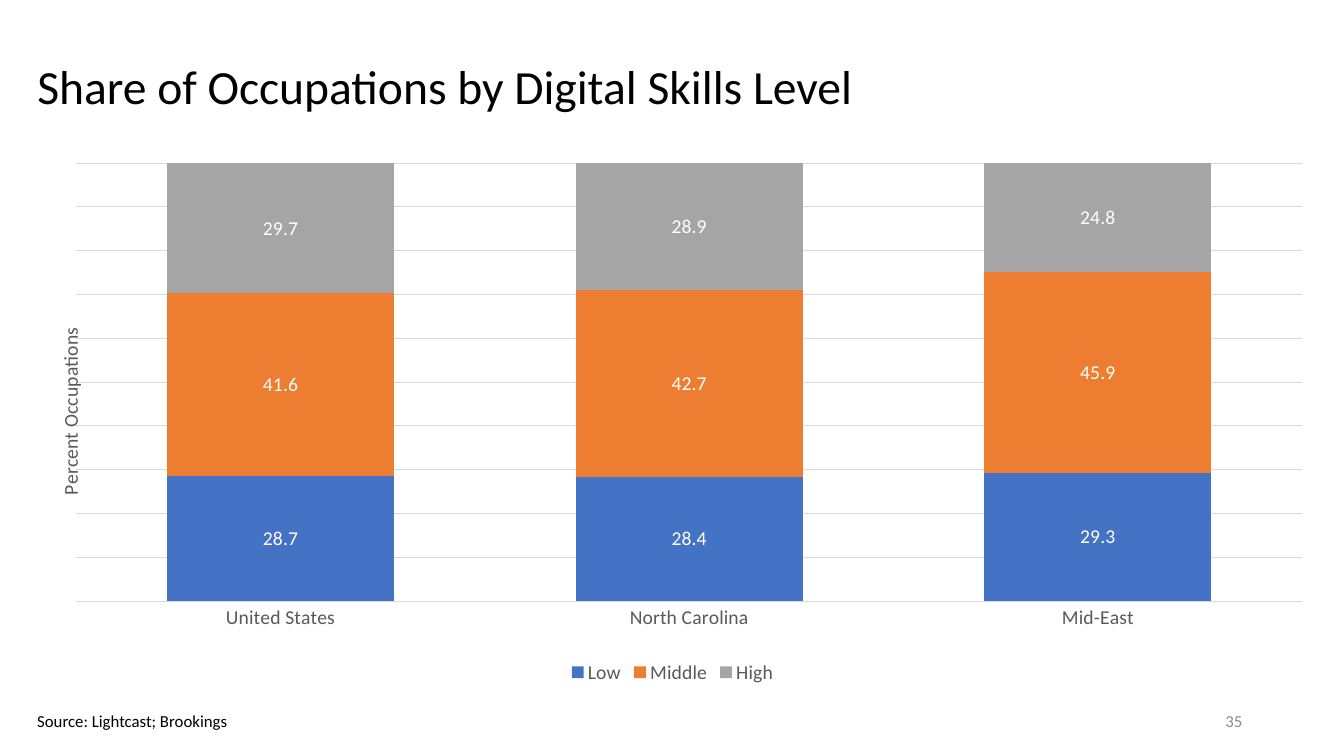
import pptx
import pptx.chart.data
import pptx.dml.color
import pptx.enum.chart
import pptx.enum.text
import pptx.oxml
import pptx.oxml.ns
import pptx.util

Inches = pptx.util.Inches
Align = pptx.enum.text.PP_ALIGN
Anchor = pptx.enum.text.MSO_ANCHOR
Place = pptx.enum.chart.XL_LEGEND_POSITION
Tick = pptx.enum.chart.XL_TICK_MARK
qn = pptx.oxml.ns.qn

HUES = {"ink": "000000", "axis": "595959", "grid": "D9D9D9", "page": "8C8C8C",
        "label": "FFFFFF", "Low": "4472C4", "Middle": "ED7D31", "High": "A5A5A5"}
PLACES = ["United States", "North Carolina", "Mid-East"]
SHARES = {"Low": (28.7, 28.4, 29.3),
          "Middle": (41.6, 42.7, 45.9),
          "High": (29.7, 28.9, 24.8)}


def assign(item, values):
    for name, value in values.items():
        setattr(item, name, value)


class Deck:
    """Holds the style and the current slide."""

    def __init__(self, face):
        self.face = face
        self.show = pptx.Presentation()
        assign(self.show, {"slide_width": Inches(13.33), "slide_height": Inches(7.5)})
        self.slide = self.show.slides.add_slide(self.show.slide_layouts[5])

    def hue(self, name):
        return pptx.dml.color.RGBColor.from_string(HUES[name])

    def font(self, font, size, hue):
        assign(font, {"name": self.face, "size": pptx.util.Pt(size), "bold": False})
        font.color.rgb = self.hue(hue)

    def line(self, line):
        line.color.rgb = self.hue("grid")
        line.width = pptx.util.Pt(0.75)

    def fill(self, shape, text, size, hue, align, frame):
        body = shape.text_frame
        assign(body, frame)
        para = body.paragraphs[0]
        assign(para, {"text": text, "alignment": align})
        self.font(para.font, size, hue)
        return para

    def title(self, text, box):
        shape = self.slide.shapes.title
        assign(shape, dict(zip(("left", "top", "width", "height"), map(Inches, box))))
        para = self.fill(shape, text, 34, "ink", Align.LEFT,
                         {"vertical_anchor": Anchor.MIDDLE, "word_wrap": True})
        para.line_spacing = 0.9

    def text(self, text, box, hue, align, frame):
        shape = self.slide.shapes.add_textbox(*map(Inches, box))
        self.fill(shape, text, 12, hue, align, frame)

    def layout(self, node, index, **parts):
        old = node.find(qn("c:layout"))
        if old is not None:
            node.remove(old)
        tags = "".join(f'<c:{tag} val="{val}"/>' for tag, val in parts.items())
        node.insert(index, pptx.oxml.parse_xml(
            f'<c:layout {pptx.oxml.ns.nsdecls("c")}>'
            f"<c:manualLayout>{tags}</c:manualLayout></c:layout>"))

    def chart(self, box, heads, rows, caption):
        data = pptx.chart.data.CategoryChartData(number_format="0.0")
        data.categories = heads
        for name, values in rows.items():
            data.add_series(name, values)
        kind = pptx.enum.chart.XL_CHART_TYPE.COLUMN_STACKED_100
        chart = self.slide.shapes.add_chart(kind, *map(Inches, box), data).chart
        assign(chart, {"has_title": False, "has_legend": True})
        self.font(chart.font, 14, "ink")

        # Legend
        assign(chart.legend, {"position": Place.BOTTOM, "include_in_layout": False})
        self.font(chart.legend.font, 14, "axis")

        # Columns and labels
        plot = chart.plots[0]
        assign(plot, {"gap_width": 80, "overlap": 100, "vary_by_categories": False})
        for series in plot.series:
            series.format.fill.solid()
            series.format.fill.fore_color.rgb = self.hue(series.name)
            labels = series.data_labels
            assign(labels, {"show_value": True, "number_format": "0.0",
                            "number_format_is_linked": False})
            self.font(labels.font, 14, "label")

        # Axes
        cat, val = chart.category_axis, chart.value_axis
        assign(cat, {"major_tick_mark": Tick.NONE, "minor_tick_mark": Tick.NONE})
        self.font(cat.tick_labels.font, 14, "axis")
        self.line(cat.format.line)
        assign(val, {"visible": False, "has_major_gridlines": True,
                     "minimum_scale": 0, "maximum_scale": 1, "major_unit": 0.1})
        self.line(val.major_gridlines.format.line)

        # Value axis title, turned upright
        head = val.axis_title
        head.text_frame.text = caption
        self.font(head.text_frame.paragraphs[0].runs[0].font, 14, "axis")
        turn = next(head._element.iter(qn("a:bodyPr")))
        turn.set("rot", "-5400000")
        turn.set("vert", "horz")
        self.layout(head._element, 1, xMode="edge", yMode="edge", x=0.02, y=0.33)

        # Plot area
        self.layout(chart._chartSpace.chart.plotArea, 0, layoutTarget="inner",
                    xMode="edge", yMode="edge", x=0.038, y=0.035, w=0.95, h=0.805)


def main():
    deck = Deck("Calibri")
    deck.title("Share of Occupations by Digital Skills Level", (0.27, 0.34, 12.76, 1.09))
    deck.chart((0.27, 1.43, 12.8, 5.4), PLACES, SHARES, "Percent Occupations")
    # Footer
    deck.text("35", (9.42, 6.95, 3, 0.4), "page", Align.RIGHT,
              {"vertical_anchor": Anchor.MIDDLE, "word_wrap": True})
    deck.text("Source: Lightcast; Brookings", (0.27, 7, 2.11, 0.3), "ink", Align.LEFT,
              {"word_wrap": False,
               "auto_size": pptx.enum.text.MSO_AUTO_SIZE.SHAPE_TO_FIT_TEXT})
    deck.show.save("out.pptx")


if __name__ == "__main__":
    main()
